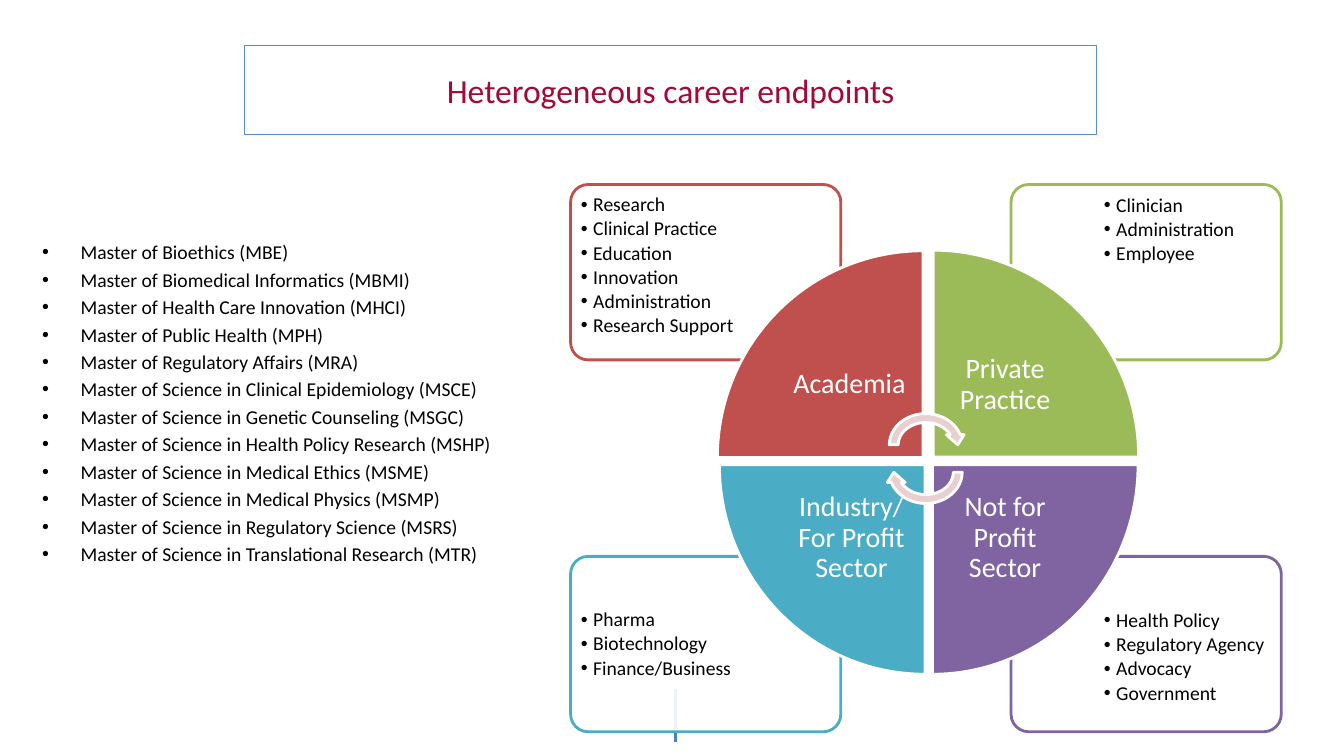
from lxml import etree
from pptx import Presentation
from pptx.dml.color import RGBColor
from pptx.enum import shapes, text
from pptx.oxml import ns
from pptx.util import Cm, Pt

CRIMSON = RGBColor(0xA3, 0x0A, 0x36)
BORDER_BLUE = RGBColor(0x55, 0x8E, 0xD5)
LINE_BLUE = RGBColor(0x4F, 0x81, 0xBD)
RED = RGBColor(0xC0, 0x50, 0x4D)
GREEN = RGBColor(0x9B, 0xBB, 0x59)
PURPLE = RGBColor(0x80, 0x64, 0xA2)
TEAL = RGBColor(0x4B, 0xAC, 0xC6)
PINK = RGBColor(0xE8, 0xD0, 0xD0)
WHITE = RGBColor(0xFF, 0xFF, 0xFF)
BLACK = RGBColor(0, 0, 0)

deck = Presentation()
deck.slide_width, deck.slide_height = Cm(33.87), Cm(19.05)
page = deck.slides.add_slide(deck.slide_layouts[6])


def add_shape(kind, frame, fill, line, width=2):
    shape = page.shapes.add_shape(kind, *map(Cm, frame))
    shape.shadow.inherit = False
    if fill is None:
        shape.fill.background()
    else:
        shape.fill.solid()
        shape.fill.fore_color.rgb = fill
    shape.line.color.rgb = line
    shape.line.width = Pt(width)
    return shape


def write(box, lines, size, color, inset, indent=0, before=0, after=0, spacing=1.0):
    """Write one paragraph per line: bulleted with an indent, centred without."""
    frame = box.text_frame
    frame.word_wrap = True
    frame.margin_left = frame.margin_right = Cm(inset[0])
    frame.margin_top = frame.margin_bottom = Cm(inset[1])
    frame.vertical_anchor = text.MSO_ANCHOR.TOP if indent else text.MSO_ANCHOR.MIDDLE
    for number, line in enumerate(lines):
        para = frame.add_paragraph() if number else frame.paragraphs[0]
        para.line_spacing = spacing
        para.space_before = Pt(before if number else 0)
        para.space_after = Pt(after)
        if indent:
            para.alignment = text.PP_ALIGN.LEFT
            properties = para._p.get_or_add_pPr()
            properties.set("marL", str(Cm(indent)))
            properties.set("indent", str(-Cm(indent)))
            font = etree.SubElement(properties, ns.qn("a:buFont"))
            font.set("typeface", "Arial")
            etree.SubElement(properties, ns.qn("a:buChar")).set("char", "•")
        else:
            para.alignment = text.PP_ALIGN.CENTER
        span = para.add_run()
        span.text = line
        span.font.name = "Calibri"
        span.font.size = Pt(size)
        span.font.color.rgb = color


# Short vertical rule at the foot of the page
rule = page.shapes.add_connector(
    shapes.MSO_CONNECTOR.STRAIGHT, Cm(17.02), Cm(17.37), Cm(17.02), Cm(18.69))
rule.line.color.rgb = LINE_BLUE
rule.line.width = Pt(2)
etree.SubElement(rule._element.spPr, ns.qn("a:effectLst"))

# Title
title = add_shape(shapes.MSO_SHAPE.RECTANGLE, (6.17, 1.14, 21.46, 2.24),
                  None, BORDER_BLUE, 0.75)
write(title, ["Heterogeneous career endpoints"], 24, CRIMSON, (0.25, 0.13))

# Degree programmes
degrees = [
    "Master of Bioethics (MBE)",
    "Master of Biomedical Informatics (MBMI)",
    "Master of Health Care Innovation (MHCI)",
    "Master of Public Health (MPH)",
    "Master of Regulatory Affairs (MRA)",
    "Master of Science in Clinical Epidemiology (MSCE)",
    "Master of Science in Genetic Counseling (MSGC)",
    "Master of Science in Health Policy Research (MSHP)",
    "Master of Science in Medical Ethics (MSME)",
    "Master of Science in Medical Physics (MSMP)",
    "Master of Science in Regulatory Science (MSRS)",
    "Master of Science in Translational Research (MTR)",
]
degree_box = page.shapes.add_textbox(Cm(0.81), Cm(5.92), Cm(15.01), Cm(13.13))
write(degree_box, degrees, 14, BLACK, (0.25, 0.13), indent=0.97, before=2.8)

# Corner cards: column, row, colour, careers
cards = [
    (1, 1, PURPLE, ["Health Policy", "Regulatory Agency", "Advocacy", "Government"]),
    (0, 1, TEAL, ["Pharma", "Biotechnology", "Finance/Business"]),
    (1, 0, GREEN, ["Clinician", "Administration", "Employee"]),
    (0, 0, RED, ["Research", "Clinical Practice", "Education", "Innovation",
                 "Administration", "Research Support"]),
]
for column, row, color, careers in cards:
    left, top = 14.38 + 11.1 * column, 4.65 + 9.37 * row
    card = add_shape(shapes.MSO_SHAPE.ROUNDED_RECTANGLE, (left, top, 6.81, 4.42),
                     WHITE, color)
    card.adjustments[0] = 0.1
    white = card._element.spPr.find(".//" + ns.qn("a:srgbClr"))
    etree.SubElement(white, ns.qn("a:alpha")).set("val", "90000")
    career_box = page.shapes.add_textbox(
        Cm(left + (2.16 if column else 0.1)), Cm(top + (1.19 if row else 0.1)),
        Cm(4.57), Cm(3.12))
    inset = 0.18 if column else 0.16
    write(career_box, careers, 14, BLACK, (inset, inset),
          indent=0.31, after=2.1, spacing=0.9)

# Wheel, clockwise from top left: frame, colour, label, label corner
wedges = [
    ((18.08, 6.32, 5.18, 5.21), RED, "Academia", (19.58, 7.85)),
    ((23.5, 6.32, 5.21, 5.18), GREEN, "Private Practice", (23.5, 7.85)),
    ((23.5, 11.71, 5.18, 5.28), PURPLE, "Not for Profit Sector", (23.5, 11.71)),
    ((18.08, 11.76, 5.28, 5.18), TEAL, "Industry/ For Profit Sector", (19.63, 11.71)),
]
for turn, (frame, color, label, corner) in enumerate(wedges):
    wedge = add_shape(shapes.MSO_SHAPE.PIE_WEDGE, frame, color, WHITE)
    wedge.rotation = 90 * turn
    label_box = page.shapes.add_textbox(*map(Cm, corner), Cm(3.66), Cm(3.7))
    write(label_box, [label], 20, WHITE, (0.4, 0.4), spacing=0.9)

# Circular arrows at the hub
for top, rotation in ((10.31, 0), (11.0, 180)):
    arrow = add_shape(shapes.MSO_SHAPE.CIRCULAR_ARROW, (22.3, top, 2.06, 1.8),
                      PINK, WHITE)
    arrow.rotation = rotation

deck.save("out.pptx")
